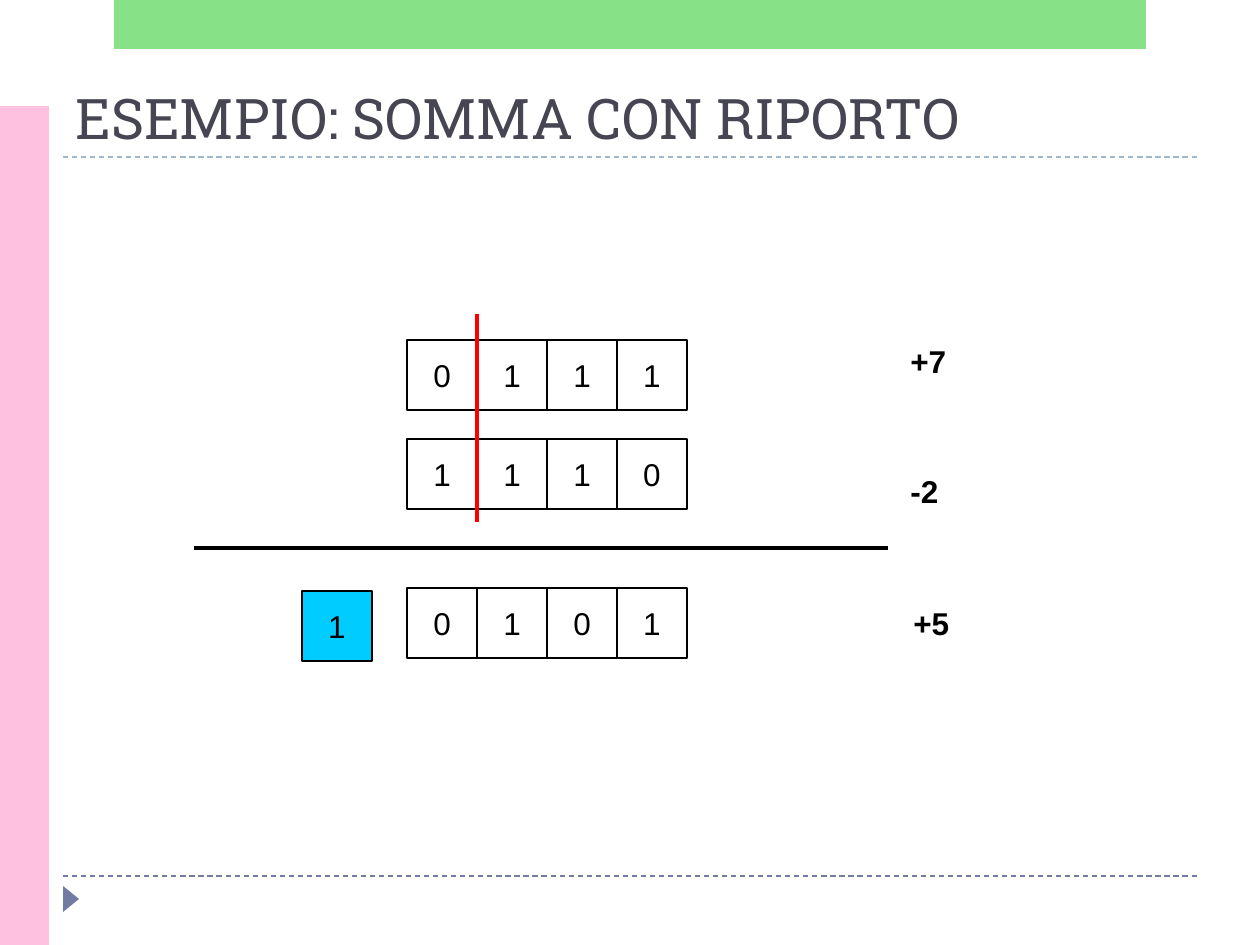
from dataclasses import dataclass

from lxml.etree import SubElement
from pptx import Presentation
from pptx.dml.color import RGBColor
from pptx.enum.dml import MSO_LINE
from pptx.enum.shapes import MSO_CONNECTOR, MSO_SHAPE
from pptx.enum.text import MSO_ANCHOR, MSO_AUTO_SIZE, PP_ALIGN
from pptx.oxml.ns import qn
from pptx.util import Emu, Pt

WHITE = RGBColor(0xFF, 0xFF, 0xFF)
BLACK = RGBColor(0x00, 0x00, 0x00)
RED = RGBColor(0xFF, 0x00, 0x00)
CYAN = RGBColor(0x00, 0xCC, 0xFF)
PINK = RGBColor(0xFF, 0xC1, 0xE0)
GREEN = RGBColor(0x62, 0xD8, 0x62)
SLATE = RGBColor(0x72, 0x7C, 0xA3)
PALE_BLUE = RGBColor(0x9F, 0xB8, 0xCD)
TITLE_GREY = RGBColor(0x46, 0x46, 0x53)

EMU_PER_PX = 914400 / 126
CELL = 70
BITS_LEFT = 407


@dataclass(frozen=True)
class BinaryRow:
    bits: str
    top: int
    value: str
    value_left: int
    value_top: int


@dataclass(frozen=True)
class Rule:
    start: tuple[int, int]
    end: tuple[int, int]
    color: RGBColor
    width: float
    dashed: bool = False


ROWS = [
    BinaryRow("0111", 340, "+7", 898, 336),
    BinaryRow("1110", 439, "-2", 898, 466),
    BinaryRow("0101", 588, "+5", 901, 598),
]
FRAME_RULES = [
    Rule((63, 876), (1197, 876), SLATE, 0.75, True),
    Rule((63, 157), (1197, 157), PALE_BLUE, 0.75, True),
]
SUM_RULES = [
    Rule((194, 548), (888, 548), BLACK, 2),
    Rule((477, 314), (477, 522), RED, 2),
]


def px(length: int) -> Emu:
    return Emu(round(length * EMU_PER_PX))


def add_block(shapes, kind, left: int, top: int, width: int, height: int, color: RGBColor):
    block = shapes.add_shape(kind, px(left), px(top), px(width), px(height))
    block.shadow.inherit = False
    block.fill.solid()
    block.fill.fore_color.rgb = color
    block.line.fill.background()
    return block


def add_rule(shapes, rule: Rule) -> None:
    line = shapes.add_connector(
        MSO_CONNECTOR.STRAIGHT, *map(px, rule.start), *map(px, rule.end)
    )
    line.line.color.rgb = rule.color
    line.line.width = Pt(rule.width)
    if rule.dashed:
        line.line.dash_style = MSO_LINE.DASH
    SubElement(line.element.spPr, qn("a:effectLst"))


def write(frame, text: str, bold: bool = False):
    para = frame.paragraphs[0]
    para.text = text
    para.font.name = "Arial"
    para.font.size = Pt(18)
    para.font.bold = bold
    para.font.color.rgb = BLACK
    return para


def add_bit(shapes, bit: str, left: int, top: int, color: RGBColor = WHITE) -> None:
    box = add_block(shapes, MSO_SHAPE.RECTANGLE, left, top, CELL, CELL, color)
    box.line.color.rgb = BLACK
    box.line.width = Pt(0.75)
    box.text_frame.word_wrap = False
    box.text_frame.vertical_anchor = MSO_ANCHOR.MIDDLE
    write(box.text_frame, bit).alignment = PP_ALIGN.CENTER


def add_binary_row(shapes, row: BinaryRow) -> None:
    group = shapes.add_group_shape()
    for column, bit in enumerate(row.bits):
        add_bit(group.shapes, bit, BITS_LEFT + column * CELL, row.top)
    box = shapes.add_textbox(px(row.value_left), px(row.value_top), px(77), px(63))
    box.text_frame.word_wrap = False
    box.text_frame.auto_size = MSO_AUTO_SIZE.SHAPE_TO_FIT_TEXT
    write(box.text_frame, row.value, bold=True)


def add_frame(shapes) -> None:
    for rule in FRAME_RULES:
        add_rule(shapes, rule)
    marker = add_block(shapes, MSO_SHAPE.ISOSCELES_TRIANGLE, 58, 891, 26, 16, SLATE)
    marker.rotation = 90
    add_block(shapes, MSO_SHAPE.RECTANGLE, 0, 106, 49, 839, PINK)
    banner = add_block(shapes, MSO_SHAPE.RECTANGLE, 114, 0, 1032, 49, GREEN)
    fill_color = banner.element.spPr.find(qn("a:solidFill")).find(qn("a:srgbClr"))
    SubElement(fill_color, qn("a:alpha"), val="76000")


def set_title(title, text: str) -> None:
    title.left, title.top, title.width, title.height = map(px, (63, 69, 1134, 88))
    title.text_frame.vertical_anchor = MSO_ANCHOR.BOTTOM
    title.text_frame.auto_size = MSO_AUTO_SIZE.NONE
    para = title.text_frame.paragraphs[0]
    para.text = text
    para.alignment = PP_ALIGN.LEFT
    para.font.name = "Roboto Slab"
    para.font.size = Pt(32)
    para.font.color.rgb = TITLE_GREY


def main() -> None:
    deck = Presentation()
    deck.slide_width, deck.slide_height = px(1260), px(945)
    page = deck.slides.add_slide(deck.slide_layouts[5])
    add_frame(page.shapes)
    set_title(page.shapes.title, "ESEMPIO: SOMMA CON RIPORTO")
    for row in ROWS:
        add_binary_row(page.shapes, row)
    for rule in SUM_RULES:
        add_rule(page.shapes, rule)
    add_bit(page.shapes, "1", 302, 591, CYAN)
    deck.save("out.pptx")


if __name__ == "__main__":
    main()
